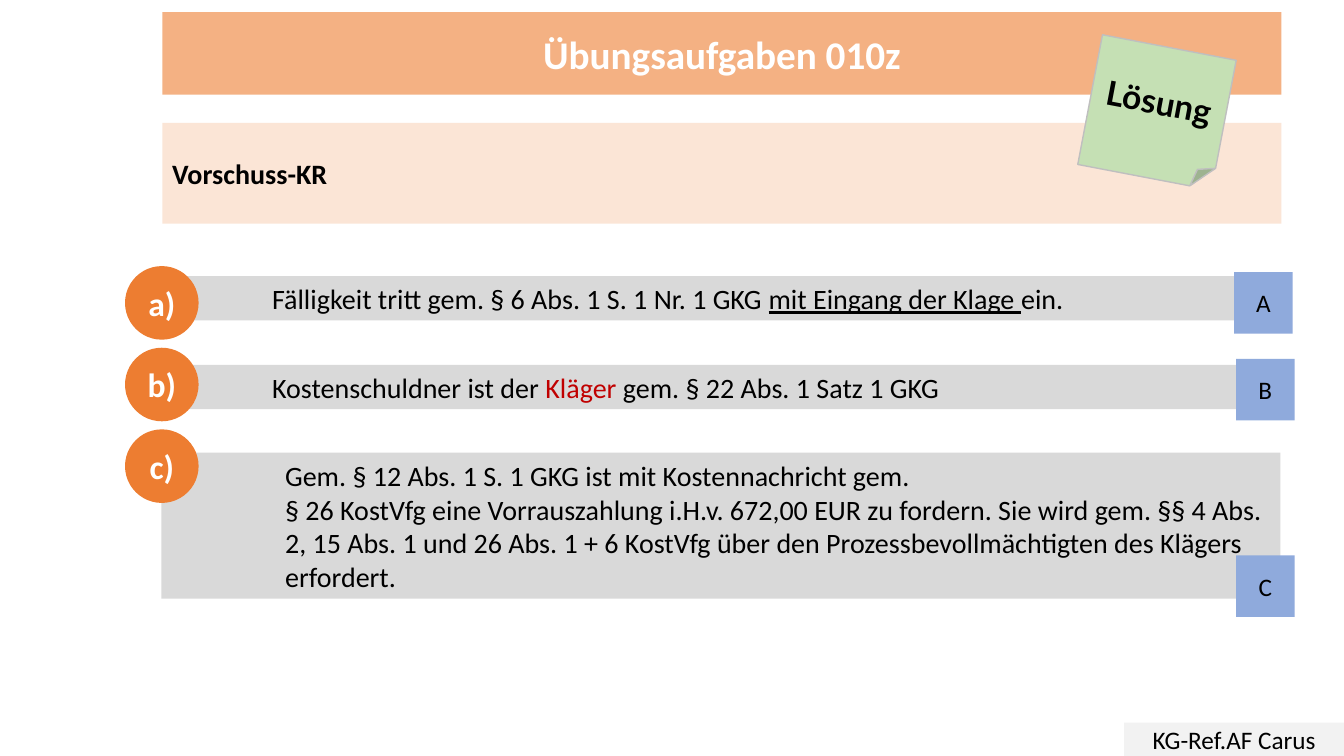
from lxml import etree
from pptx import Presentation
from pptx.dml.color import RGBColor
from pptx.enum import shapes, text
from pptx.oxml import ns
from pptx.util import Inches, Pt

BLACK = RGBColor(0x00, 0x00, 0x00)
WHITE = RGBColor(0xFF, 0xFF, 0xFF)
RED = RGBColor(0xC0, 0x00, 0x00)
PEACH = RGBColor(0xF4, 0xB1, 0x83)
CREAM = RGBColor(0xFB, 0xE5, 0xD6)
ORANGE = RGBColor(0xED, 0x7D, 0x31)
GREEN = RGBColor(0xC5, 0xE0, 0xB4)
BLUE = RGBColor(0x8F, 0xAA, 0xDC)
GREY = RGBColor(0xD9, 0xD9, 0xD9)
PALE = RGBColor(0xF2, 0xF2, 0xF2)
EDGE = RGBColor(0xBF, 0xBF, 0xBF)

KIND = shapes.MSO_SHAPE
LEFT, MID = text.PP_ALIGN.LEFT, text.PP_ALIGN.CENTER
WIDE = 11.1

# Letter, bar top, bar height, tag left, tag top, indent, paragraphs of (text, format) runs
ANSWERS = [
    ("a", 2.74, 0.44, 12.24, 2.7, 1, [
        [("Fälligkeit tritt gem. § 6 Abs. 1 S. 1 Nr. 1 GKG ", {}),
         ("mit Eingang der Klage ", {"underline": True}),
         ("ein.", {})]]),
    ("b", 3.62, 0.44, 12.26, 3.56, 1, [
        [("Kostenschuldner ist der ", {}),
         ("Kläger", {"color": RED}),
         (" gem. § 22 Abs. 1 Satz 1 GKG", {})]]),
    ("c", 4.49, 1.45, 12.26, 5.51, 1.13, [
        [("Gem. § 12 Abs. 1 S. 1 GKG ist mit Kostennachricht gem.", {})],
        [("§ 26 KostVfg eine Vorrauszahlung i.H.v. 672,00 EUR zu fordern. "
          "Sie wird gem. §§ 4 Abs. 2, 15 Abs. 1 und 26 Abs. 1 + 6 KostVfg "
          "über den Prozessbevollmächtigten des Klägers erfordert.", {})]]),
]


def place(shape, box):
    for name, value in zip(("left", "top", "width", "height"), box):
        setattr(shape, name, Inches(value))


def paint(shape, fill):
    shape.fill.solid()
    shape.fill.fore_color.rgb = fill


def write(shape, paras, align=MID, indent=0, **base):
    """Fill a shape with paragraphs, each a list of (text, format) runs."""
    frame = shape.text_frame
    frame.word_wrap = True
    frame.auto_size = text.MSO_AUTO_SIZE.NONE
    frame.vertical_anchor = text.MSO_ANCHOR.MIDDLE
    for i, runs in enumerate(paras):
        para = frame.add_paragraph() if i else frame.paragraphs[0]
        para.alignment = align
        if indent:
            para._p.get_or_add_pPr().set("marL", str(Inches(indent)))
        for words, extra in runs:
            run = para.add_run()
            run.text = words
            style = {"name": "Calibri", "size": Pt(20), "color": BLACK, **base, **extra}
            run.font.color.rgb = style.pop("color")
            for name, value in style.items():
                setattr(run.font, name, value)


def block(slide, kind, box, fill):
    shape = slide.shapes.add_shape(kind, *map(Inches, box))
    shape.shadow.inherit = False
    paint(shape, fill)
    shape.line.fill.background()
    return shape


def label(slide, kind, box, fill, words, **style):
    shape = block(slide, kind, box, fill)
    write(shape, [[(words, {})]], **style)
    return shape


def head(slide, words):
    """Give the title placeholder a rounded, filled outline."""
    title = slide.shapes.title
    place(title, (1.61, 0.12, WIDE, 0.82))
    geom = etree.SubElement(title._element.spPr, ns.qn("a:prstGeom"), prst="roundRect")
    etree.SubElement(geom, ns.qn("a:avLst"))
    paint(title, PEACH)
    write(title, [[(words, {})]], size=Pt(28), bold=True, color=WHITE)


def note(slide, words):
    shape = label(slide, KIND.FOLDED_CORNER, (10.8, 0.46, 1.35, 1.31), GREEN, words,
                  name="Lato", size=Pt(24), bold=True)
    shape.rotation = 10.8
    shape.line.color.rgb = EDGE
    shape.line.width = Pt(1)


def main():
    deck = Presentation()
    deck.slide_width, deck.slide_height = Inches(13.33), Inches(7.5)
    slide = deck.slides.add_slide(deck.slide_layouts[5])

    # Heading, topic and footer
    head(slide, "Übungsaufgaben 010z")
    label(slide, KIND.RECTANGLE, (1.61, 1.22, WIDE, 1), CREAM, "Vorschuss-KR",
          align=LEFT, bold=True)
    label(slide, KIND.RECTANGLE, (11.15, 7.17, 2.18, 0.33), PALE, "KG-Ref.AF Carus",
          size=Pt(18))
    note(slide, "Lösung")

    # Answer bars with bullets and tags
    for i, (mark, top, high, side, drop, indent, paras) in enumerate(ANSWERS):
        bar = block(slide, KIND.RECTANGLE, (1.6, top, WIDE, high), GREY)
        write(bar, paras, align=LEFT, indent=indent)
        label(slide, KIND.FLOWCHART_CONNECTOR, (1.24, 2.64 + 0.81 * i, 0.73, 0.73),
              ORANGE, mark + ")", size=Pt(24), bold=True, color=WHITE)
        label(slide, KIND.RECTANGLE, (side, drop, 0.58, 0.61), BLUE, mark.upper(),
              size=Pt(18))

    deck.save("out.pptx")


if __name__ == "__main__":
    main()
